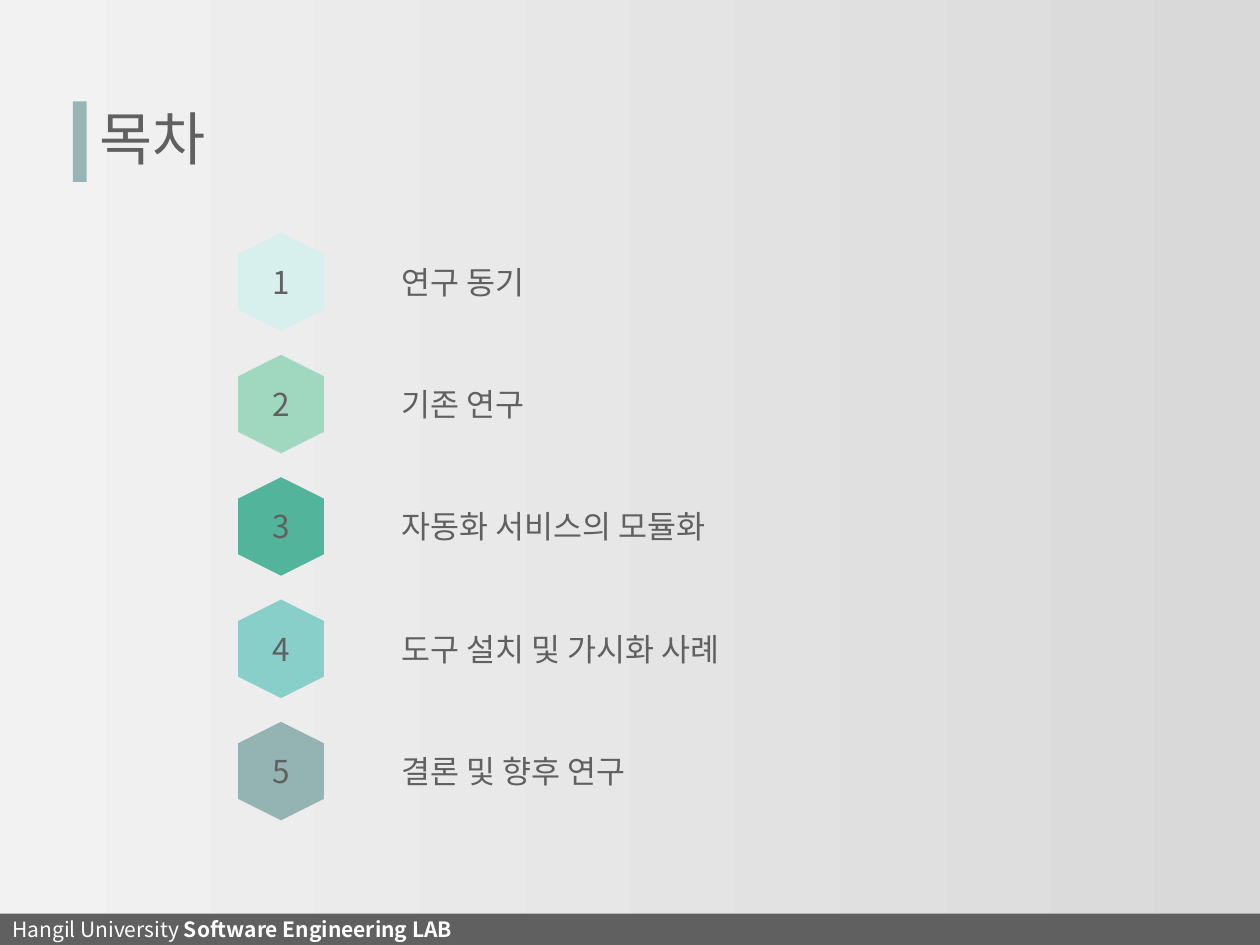
import pptx
import pptx.util
import pptx.dml.color
import pptx.enum.shapes
import pptx.enum.text
import pptx.oxml.ns
from lxml import etree

Pt = pptx.util.Pt
RGBColor = pptx.dml.color.RGBColor
Shapes = pptx.enum.shapes.MSO_SHAPE
Align = pptx.enum.text.PP_ALIGN
Anchor = pptx.enum.text.MSO_ANCHOR

TITLE = "목차"
FOOTER = [("Hangil University ", False), ("Software Engineering LAB", True)]
CONTENTS = [
    ("연구 동기", RGBColor(0xD7, 0xEF, 0xED)),
    ("기존 연구", RGBColor(0x9F, 0xD7, 0xBF)),
    ("자동화 서비스의 모듈화", RGBColor(0x52, 0xB4, 0x9B)),
    ("도구 설치 및 가시화 사례", RGBColor(0x88, 0xCE, 0xC9)),
    ("결론 및 향후 연구", RGBColor(0x94, 0xB4, 0xB3)),
]

FONT = "Noto Sans CJK KR"
GREY = RGBColor(0x60, 0x60, 0x60)
WHITE = RGBColor(0xFF, 0xFF, 0xFF)
ACCENT = RGBColor(0x96, 0xB5, 0xB4)
BACKDROP = [RGBColor(0xF2, 0xF2, 0xF2), RGBColor(0xD9, 0xD9, 0xD9)]

WIDTH, HEIGHT = 720, 540
FOOTER_HEIGHT = 18
HEXAGON_WIDTH, HEXAGON_HEIGHT = 56.3, 49
HEXAGON_CENTER = 160.6
FIRST_ROW_CENTER, ROW_PITCH = 161, 69.9
NUMBER_WIDTH = 49
LABEL_LEFT, LABEL_WIDTH = 222.5, 363.6
TEXT_HEIGHT = 29


def style_run(span, size, color, bold=None):
    span.font.size = Pt(size)
    span.font.name = FONT
    span.font.bold = bold
    span.font.color.rgb = color
    # Korean text takes its typeface from a:ea, which follows a:latin.
    latin = span.font._element.find(pptx.oxml.ns.qn("a:latin"))
    east_asian = etree.Element(pptx.oxml.ns.qn("a:ea"), typeface=FONT)
    latin.addnext(east_asian)


def add_plain_shape(slide, kind, left, top, width, height, color=None):
    shape = slide.shapes.add_shape(kind, Pt(left), Pt(top), Pt(width), Pt(height))
    shape.shadow.inherit = False
    shape.line.fill.background()
    if color is not None:
        shape.fill.solid()
        shape.fill.fore_color.rgb = color
    return shape


def add_text(slide, text, left, top, width, align):
    box = slide.shapes.add_textbox(Pt(left), Pt(top), Pt(width), Pt(TEXT_HEIGHT))
    frame = box.text_frame
    frame.word_wrap = True
    frame.auto_size = pptx.enum.text.MSO_AUTO_SIZE.SHAPE_TO_FIT_TEXT
    frame.text = text
    para = frame.paragraphs[0]
    para.alignment = align
    style_run(para.runs[0], 18, GREY)


def add_backdrop(slide):
    backdrop = add_plain_shape(slide, Shapes.RECTANGLE, 0, 0, WIDTH, HEIGHT)
    backdrop.fill.gradient()
    backdrop.fill.gradient_angle = 0
    for stop, color in zip(backdrop.fill.gradient_stops, BACKDROP):
        stop.color.rgb = color


def add_footer(slide):
    footer = add_plain_shape(slide, Shapes.RECTANGLE, 0, HEIGHT - FOOTER_HEIGHT,
                             WIDTH, FOOTER_HEIGHT, GREY)
    footer.text_frame.vertical_anchor = Anchor.MIDDLE
    para = footer.text_frame.paragraphs[0]
    para.alignment = Align.LEFT
    for text, bold in FOOTER:
        span = para.add_run()
        span.text = text
        style_run(span, 12, WHITE, bold)


def format_title(slide):
    add_plain_shape(slide, Shapes.RECTANGLE, 41.6, 58, 8, 46, ACCENT)
    title = slide.shapes.title
    title.left, title.top, title.width, title.height = Pt(49.6), Pt(28.8), Pt(621), Pt(104.4)
    title.text_frame.text = TITLE
    title.text_frame.vertical_anchor = Anchor.MIDDLE
    para = title.text_frame.paragraphs[0]
    para.alignment = Align.LEFT
    para.line_spacing = 0.9
    style_run(para.runs[0], 33, GREY)
    # Bring the placeholder in front of the backdrop.
    slide.shapes._spTree.append(title._element)


def add_contents(slide):
    for index, (label, color) in enumerate(CONTENTS):
        center = FIRST_ROW_CENTER + index * ROW_PITCH
        hexagon = add_plain_shape(slide, Shapes.HEXAGON,
                                  HEXAGON_CENTER - HEXAGON_WIDTH / 2,
                                  center - HEXAGON_HEIGHT / 2,
                                  HEXAGON_WIDTH, HEXAGON_HEIGHT, color)
        hexagon.rotation = 270
        top = center - TEXT_HEIGHT / 2
        add_text(slide, str(index + 1), HEXAGON_CENTER - NUMBER_WIDTH / 2, top,
                 NUMBER_WIDTH, Align.CENTER)
        add_text(slide, label, LABEL_LEFT, top, LABEL_WIDTH, Align.LEFT)


def main():
    deck = pptx.Presentation()
    deck.slide_width, deck.slide_height = Pt(WIDTH), Pt(HEIGHT)
    slide = deck.slides.add_slide(deck.slide_layouts.get_by_name("Title Only"))
    add_backdrop(slide)
    add_footer(slide)
    format_title(slide)
    add_contents(slide)
    deck.save("out.pptx")


if __name__ == "__main__":
    main()
